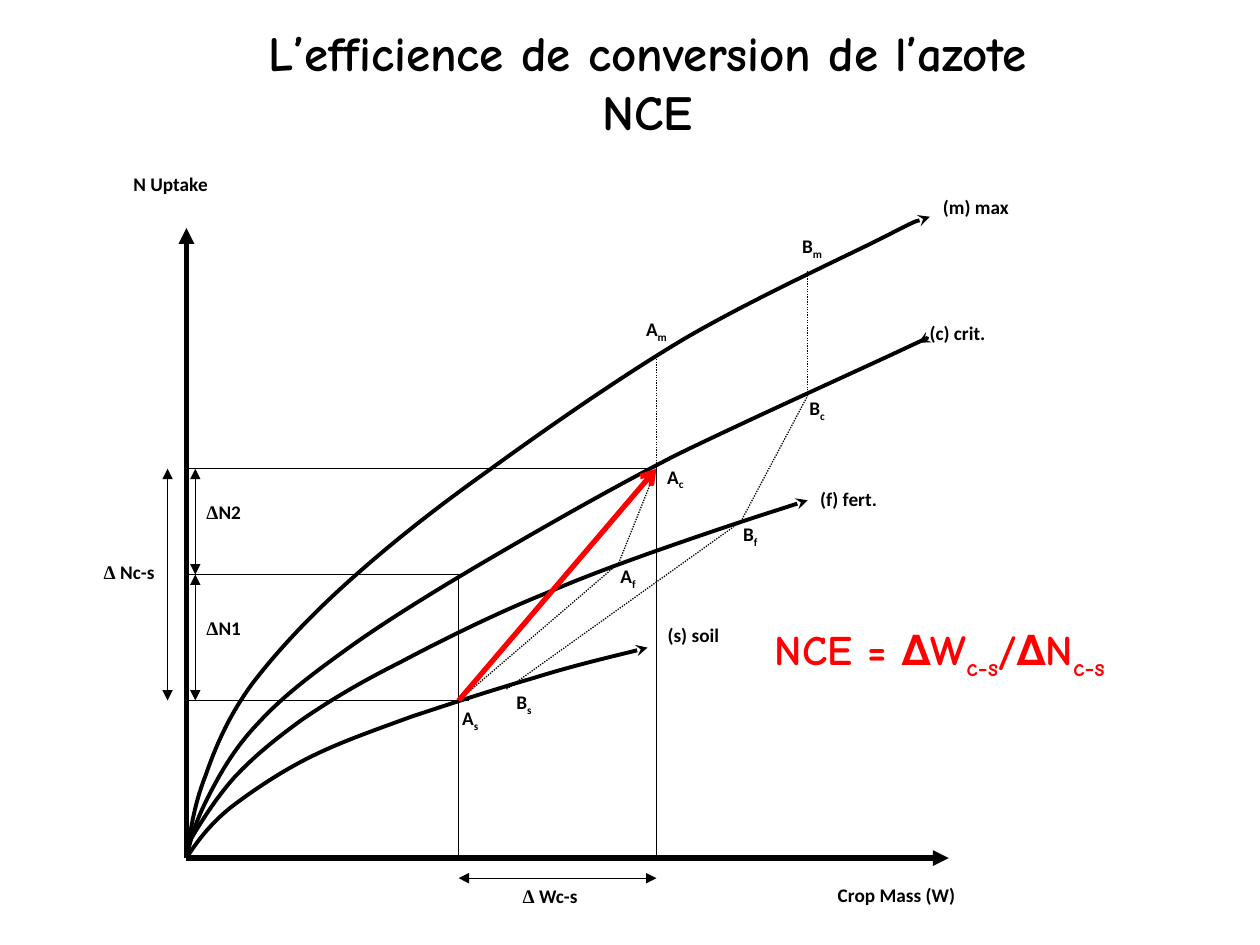
from lxml.etree import SubElement
from pptx import Presentation
from pptx.dml.color import RGBColor
from pptx.enum.dml import MSO_LINE
from pptx.enum.shapes import MSO_CONNECTOR
from pptx.enum.text import MSO_AUTO_SIZE, PP_ALIGN
from pptx.oxml.ns import qn
from pptx.util import Inches, Pt

BLACK = RGBColor(0, 0, 0)
RED = RGBColor(255, 0, 0)
LEFT, MID = PP_ALIGN.LEFT, PP_ALIGN.CENTER

deck = Presentation()
deck.slide_width, deck.slide_height = Inches(10), Inches(7.5)
slide = deck.slides.add_slide(deck.slide_layouts[6])
shapes = slide.shapes

# The grid has 100 columns and 75 rows of square cells.
cell = deck.slide_width // 100


def label(col, row, wide, high, text, align, size=11, font="Calibri", color=BLACK):
    """Add text; "|" parts runs, and a run that starts with "_" is a subscript."""
    box = shapes.add_textbox(*(round(n * cell) for n in (col, row, wide, high)))
    frame = box.text_frame
    frame.text = text.replace("|", "")
    frame.word_wrap = size == 11
    if size > 11:
        frame.auto_size = MSO_AUTO_SIZE.SHAPE_TO_FIT_TEXT
    for para, words in zip(frame.paragraphs, text.split("\n")):
        para.text = ""
        para.alignment = align
        for part in words.split("|"):
            run = para.add_run()
            run.text = part.removeprefix("_")
            run.font.size, run.font.bold = Pt(size), True
            run.font.name = "Times New Roman" if part == "Δ" else font
            run.font.color.rgb = color
            if part.startswith("_"):
                run.font._element.set("baseline", "-25000")


def ink(shape, width, color=BLACK, dash=None, head=None, tail=None):
    """Style a line or curve, with its arrowheads and no shadow."""
    shape.line.color.rgb = color
    shape.line.width = Pt(width)
    if dash:
        shape.line.dash_style = dash
    props = shape._element.spPr
    for tag, kind in (("a:headEnd", head), ("a:tailEnd", tail)):
        if kind:
            SubElement(props.find(qn("a:ln")), qn(tag)).set("type", kind)
    SubElement(props, qn("a:effectLst"))


# Columns and rows that the axes, guides and arrows share
zero, soil, crit, far = 14.8, 36.4, 52.1, 64.1
base, low, half, top = 68.1, 55.6, 45.6, 37.2

label(15.7, 1.3, 71.4, 10.4, "L’efficience de conversion de l’azote\nNCE", MID, 28, "Comic Neue")

# Each curve: its start, then two control points and an end per bend
curves = [
    [(zero, base), (15.1, 66.7), (15.5, 65.3), (16.4, 63.5),
     (17.3, 61.7), (18.5, 59.5), (20.4, 57.5), (22.3, 55.4), (24.5, 53.7), (27.7, 51.4),
     (30.9, 49.1), (35.5, 46.3), (39.8, 43.8), (44.1, 41.3), (48.3, 38.9), (53.5, 36.2),
     (58.8, 33.6), (68.1, 29.4), (71.3, 27.9), (74.5, 26.4), (73.7, 26.8), (72.9, 27.2)],
    [(zero, base), (15.1, 66), (15.4, 63.9), (16.3, 61.6),
     (17.1, 59.3), (18.1, 56.9), (20, 54.3), (21.9, 51.8), (24.4, 49.1), (27.5, 46.3),
     (30.6, 43.5), (34.2, 40.6), (38.7, 37.4), (43.1, 34.2), (49.1, 30), (54.3, 26.9),
     (59.6, 23.8), (66.8, 20.5), (70, 18.9), (73.3, 17.2), (73.1, 17.5), (73.8, 17.2)],
    [(zero, base), (15.7, 66.7), (16.7, 65.4), (18.3, 64.1),
     (20, 62.8), (22.2, 61.3), (24.6, 60.1), (27, 58.9), (29.6, 58), (32.6, 56.9),
     (35.6, 55.9), (39.3, 54.7), (42.4, 53.8), (45.6, 52.8), (49.9, 51.8), (51.4, 51.4)],
    [(zero, 67.2), (15.9, 65.3), (17.1, 63.4), (18.6, 61.7),
     (20.2, 60), (21.8, 58.7), (24, 57.1), (26.2, 55.6), (28.5, 54.2), (31.7, 52.6),
     (34.9, 50.9), (39.3, 48.7), (43.3, 47.1), (47.2, 45.4), (52.1, 43.7), (55.6, 42.5),
     (59.1, 41.3), (62.6, 40.2), (64.1, 39.7)],
]
for curve in curves:
    spots = [(round(x * cell), round(y * cell)) for x, y in curve]
    pen = shapes.build_freeform(*spots[0])
    pen.add_line_segments(spots[1:], close=False)
    shape = pen.convert_to_shape()
    shape.fill.background()
    ink(shape, 2.25, tail="stealth")
    # Turn every three straight steps into one cubic bend
    route = next(shape._element.iter(qn("a:path")))
    steps = route.findall(qn("a:lnTo"))
    for i in range(0, len(steps), 3):
        bend = SubElement(route, qn("a:cubicBezTo"))
        for step in steps[i:i + 3]:
            bend.append(step[0])
            route.remove(step)

axis = dict(width=3, tail="triangle")
dots = dict(width=0.75, dash=MSO_LINE.ROUND_DOT)
guide = dict(width=0.75)
span = dict(width=0.75, head="triangle", tail="triangle")
lines = [
    (zero, base, 75.3, base, axis),
    (zero, base, zero, 18.1, axis),
    (soil, low, 49.1, 44.7, dots),
    (49.1, 44.7, crit, top, dots),
    (crit, top, crit, 28.1, dots),
    (40.2, 54.7, 58.8, 41.4, dots),
    (58.8, 41.4, far, 31.4, dots),
    (far, 31.4, far, 21.4, dots),
    (37.2, low, zero, low, guide),
    (51.4, top, zero, top, guide),
    (soil, base, soil, half, guide),
    (soil, half, zero, half, guide),
    (crit, top, crit, base, guide),
    (soil, 69.7, crit, 69.7, span),
    (13.3, top, 13.3, low, span),
    (15.5, half, 15.5, low, span),
    (15.5, half, 15.5, top, span),
    (soil, low, crit, top, dict(width=3, color=RED, tail="arrow")),
]
for *ends, style in lines:
    line = shapes.add_connector(MSO_CONNECTOR.STRAIGHT, *(round(n * cell) for n in ends))
    ink(line, **style)

labels = [
    (69.3, 25, 13.4, "(c) crit.", MID),
    (70, 15, 14.9, "(m) max", MID),
    (52, 49, 9.9, "(s) soil", LEFT),
    (64.1, 38.2, 10.5, "(f) fert.", LEFT),
    (65.5, 69.6, 20.2, "Crop Mass (W)", LEFT),
    (9.6, 13.2, 19.4, "N Uptake", LEFT),
    (40.5, 69.7, 16.1, "Δ| Wc-s", LEFT),
    (4.3, 44, 11.9, "Δ| Nc-s", MID),
    (15.4, 48.4, 8.4, "Δ|N1", LEFT),
    (15.4, 39.2, 7.6, "Δ|N2", LEFT),
    (35.7, 55.6, 6.7, "A|_s", LEFT),
    (40, 54.3, 5.4, "B|_s", LEFT),
    (49.1, 36.4, 9, "A|_c", MID),
    (61.1, 31, 7.5, "B|_c", MID),
    (47.6, 24.7, 9, "A|_m", MID),
    (59.2, 18.1, 10.5, "B|_m", MID),
    (46.1, 44.3, 7.5, "A|_f", MID),
    (55.8, 41, 7.5, "B|_f", MID),
]
for col, row, wide, text, align in labels:
    label(col, row, wide, 3, text, align)

label(60.5, 49, 34.5, 5, "NCE = ∆W|_c-s|/∆N|_c-s", LEFT, 24, "Comic Neue", RED)

deck.save("out.pptx")
